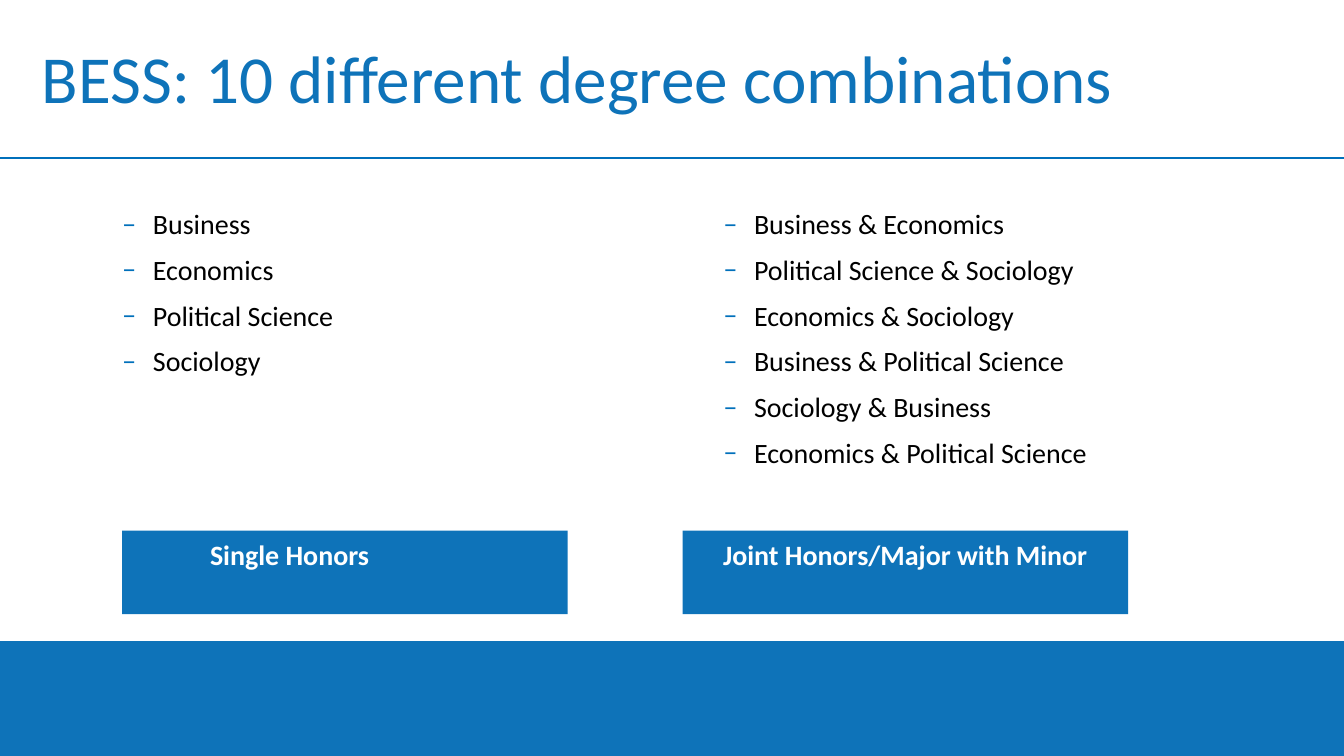
from lxml.etree import SubElement
from pptx import Presentation
from pptx.dml.color import RGBColor
from pptx.enum.shapes import MSO_CONNECTOR, MSO_SHAPE
from pptx.enum.text import MSO_ANCHOR, MSO_AUTO_SIZE, PP_ALIGN
from pptx.oxml.ns import qn
from pptx.util import Cm, Pt

BLUE = "0E73B9"
RULE_BLUE = "0070BB"
WIDTH, HEIGHT = 25.4, 14.29
BAND_TOP = 12.12
SINGLE = ["Business", "Economics", "Political Science", "Sociology"]
JOINT = [
    "Business & Economics",
    "Political Science & Sociology",
    "Economics & Sociology",
    "Business & Political Science",
    "Sociology & Business",
    "Economics & Political Science",
]


def rgb(value):
    """Turn a hex string into a colour."""
    return RGBColor.from_string(value)


def write(p, text, size=15, color="000000", bold=False, align=PP_ALIGN.LEFT):
    """Add formatted text to a paragraph."""
    p.alignment = align
    r = p.add_run()
    r.text = text
    r.font.name = "Calibri"
    r.font.size = Pt(size)
    r.font.bold = bold
    r.font.color.rgb = rgb(color)


def add_dash(p):
    """Give a paragraph a hanging dash bullet."""
    pPr = p._p.get_or_add_pPr()
    pPr.set("marL", str(Cm(0.58)))
    pPr.set("indent", str(-Cm(0.58)))
    SubElement(SubElement(pPr, qn("a:buClr")), qn("a:srgbClr"), val=RULE_BLUE)
    SubElement(pPr, qn("a:buFont"), typeface="Calibri")
    SubElement(pPr, qn("a:buChar"), char="‒")


def place(sp, left, top, width, height, anchor):
    """Position a placeholder without insets and return its text frame."""
    sp.left, sp.top, sp.width, sp.height = Cm(left), Cm(top), Cm(width), Cm(height)
    tf = sp.text_frame
    tf.margin_left = tf.margin_top = tf.margin_right = tf.margin_bottom = 0
    tf.vertical_anchor = anchor
    tf.auto_size = MSO_AUTO_SIZE.NONE
    tf.word_wrap = True
    return tf


def fill_list(sp, left, items):
    """Fill a body placeholder with a dashed list."""
    tf = place(sp, left, 3.91, 10.92, 6.58, MSO_ANCHOR.TOP)
    for i, item in enumerate(items):
        p = tf.add_paragraph() if i else tf.paragraphs[0]
        add_dash(p)
        p.space_before = Pt(6.5 if i else 0)
        write(p, item)


def add_block(s, left, top, width, height):
    """Add a plain blue rectangle."""
    sp = s.shapes.add_shape(MSO_SHAPE.RECTANGLE, Cm(left), Cm(top), Cm(width), Cm(height))
    sp.shadow.inherit = False
    sp.fill.solid()
    sp.fill.fore_color.rgb = rgb(BLUE)
    sp.line.fill.background()
    return sp


def add_label(s, left, text, margin_right=0.25):
    """Add a blue label with bold white text at its top."""
    tf = add_block(s, left, 10.03, 8.42, 1.58).text_frame
    tf.word_wrap = True
    tf.vertical_anchor = MSO_ANCHOR.TOP
    tf.margin_right = Cm(margin_right)
    write(tf.paragraphs[0], text, color="FFFFFF", bold=True, align=PP_ALIGN.CENTER)


def add_rule(s, top):
    """Add a thin line across the slide."""
    line = s.shapes.add_connector(MSO_CONNECTOR.STRAIGHT, 0, Cm(top), Cm(WIDTH), Cm(top))
    line.line.color.rgb = rgb(RULE_BLUE)
    line.line.width = Pt(0.75)
    SubElement(line._element.spPr, qn("a:effectLst"))


def main():
    """Build the slide and save it."""
    prs = Presentation()
    prs.slide_width, prs.slide_height = Cm(WIDTH), Cm(HEIGHT)
    s = prs.slides.add_slide(prs.slide_layouts[3])
    title, left_body, right_body = s.placeholders
    add_block(s, 0, BAND_TOP, WIDTH, HEIGHT - BAND_TOP)
    add_rule(s, 2.99)
    tf = place(title, 0.79, 1.04, 20.83, 1.17, MSO_ANCHOR.BOTTOM)
    write(tf.paragraphs[0], "BESS: 10 different degree combinations", size=36, color=BLUE)
    fill_list(left_body, 2.31, SINGLE)
    fill_list(right_body, 13.67, JOINT)
    add_label(s, 2.31, "Single Honors", margin_right=2.34)
    add_label(s, 12.9, "Joint Honors/Major with Minor")
    prs.save("out.pptx")


if __name__ == "__main__":
    main()
